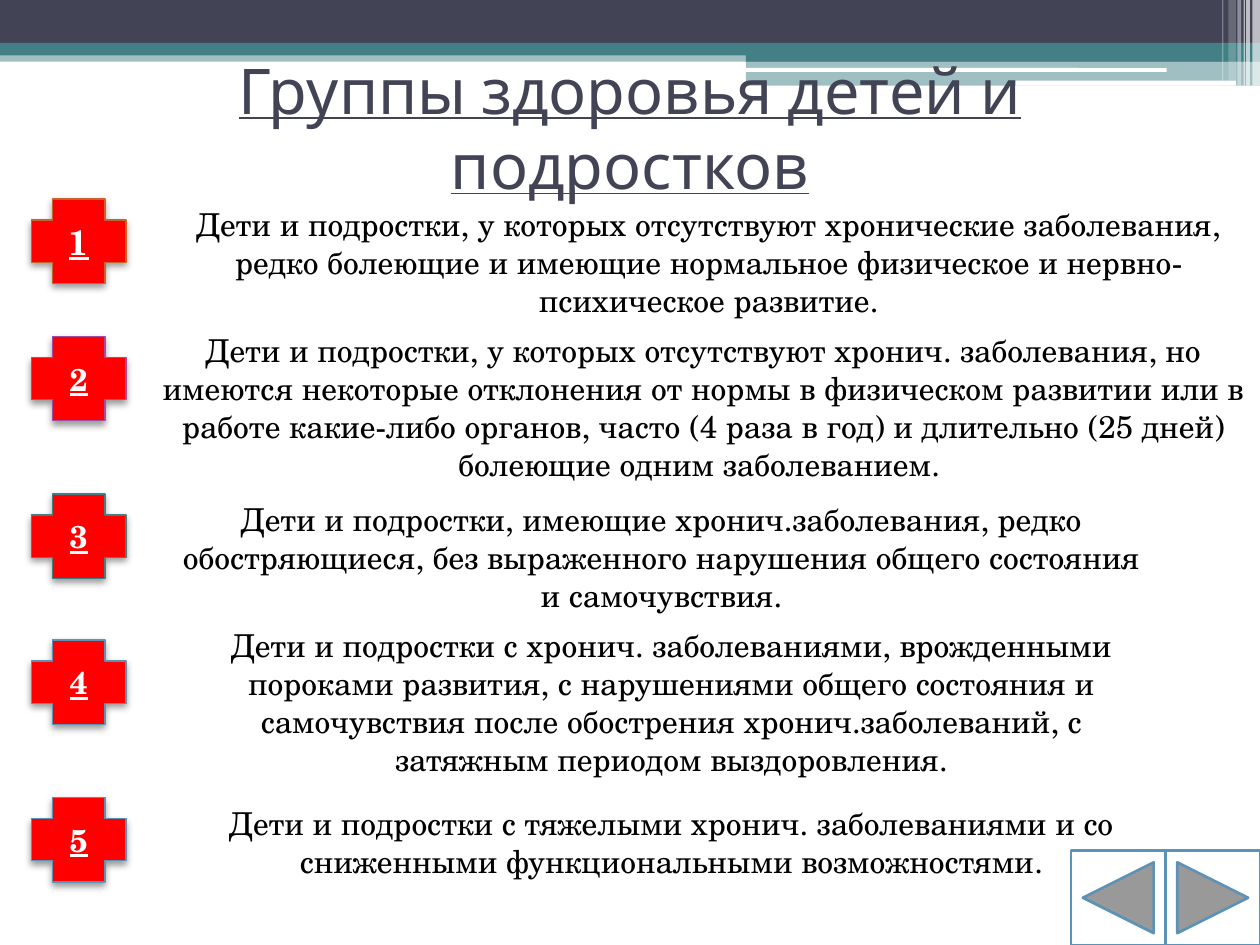
"""Builds a slide on the five health groups of children and teenagers."""
from lxml import etree
from pptx import Presentation
from pptx.dml.color import RGBColor
from pptx.enum.shapes import MSO_SHAPE
from pptx.enum.text import MSO_ANCHOR, MSO_AUTO_SIZE, PP_ALIGN
from pptx.oxml import parse_xml
from pptx.oxml.ns import nsdecls, qn
from pptx.util import Inches, Pt

RECT, ROUND, CROSS = MSO_SHAPE.RECTANGLE, MSO_SHAPE.ROUNDED_RECTANGLE, MSO_SHAPE.CROSS
NEXT = MSO_SHAPE.ACTION_BUTTON_FORWARD_OR_NEXT
BACK = MSO_SHAPE.ACTION_BUTTON_BACK_OR_PREVIOUS
CENTER, MIDDLE, FIXED = PP_ALIGN.CENTER, MSO_ANCHOR.MIDDLE, MSO_AUTO_SIZE.NONE
SERIF = "TeX Gyre Schola"
NAVY, TEAL, WHITE, RED, BLUE = "424456", "438086", "FFFFFF", "FF0000", "5C92B5"
SHADOW = (
    f'<a:outerShdw {nsdecls("a")} blurRad="52070" dist="25400" dir="5400000" rotWithShape="0">'
    '<a:srgbClr val="000000"><a:alpha val="40000"/></a:srgbClr></a:outerShdw>'
)

deck = Presentation()
deck.slide_width, deck.slide_height = Inches(10), Inches(7.5)
slide = deck.slides.add_slide(deck.slide_layouts[5])
shapes = slide.shapes


def draw(kind, box, fill, line=None, width=0.75):
    shape = shapes.add_shape(kind, *[Inches(v) for v in box])
    shape.shadow.inherit = False
    shape.fill.solid()
    shape.fill.fore_color.rgb = RGBColor.from_string(fill)
    if line:
        shape.line.color.rgb = RGBColor.from_string(line)
        shape.line.width = Pt(width)
    else:
        shape.line.fill.background()
    return shape


def write(shape, text, size, color, face=SERIF, bold=False, under=False):
    frame = shape.text_frame
    frame.word_wrap = True
    frame.text = text
    para = frame.paragraphs[0]
    para.alignment = CENTER
    font = para.runs[0].font
    font.name, font.size, font.bold, font.underline = face, Pt(size), bold, under
    font.color.rgb = RGBColor.from_string(color)
    return frame


bands = [
    (RECT, (0, 0.4, 10, 0.09), TEAL, 50),
    (RECT, (0, 0, 10, 0.34), NAVY, 100),
    (RECT, (0, 0.34, 10, 0.1), TEAL, 100),
    (RECT, (5.92, 0.39, 4.08, 0.1), TEAL, 100),
    (RECT, (5.92, 0.48, 4.08, 0.2), TEAL, 50),
    (ROUND, (5.91, 0.54, 3.35, 0.03), WHITE, 100),
    (ROUND, (8.06, 0.64, 1.75, 0.04), WHITE, 100),
    (RECT, (9.94, 0, 0.06, 0.68), WHITE, 65),
    (RECT, (9.89, 0, 0.03, 0.68), WHITE, 65),
    (RECT, (9.87, 0, 0.01, 0.68), WHITE, 60),
    (RECT, (9.82, 0, 0.03, 0.68), WHITE, 40),
    (RECT, (9.75, 0, 0.06, 0.64), WHITE, 20),
    (RECT, (9.7, 0, 0.01, 0.64), WHITE, 30),
]
for kind, box, fill, alpha in bands:
    band = draw(kind, box, fill)
    if alpha < 100:
        tint = band._element.spPr.find(".//" + qn("a:srgbClr"))
        etree.SubElement(tint, qn("a:alpha"), val=str(alpha * 1000))

title = shapes.title
title.left, title.top, title.width, title.height = [Inches(v) for v in (0.5, 0.42, 9, 1.17)]
frame = write(title, "Группы здоровья детей и подростков", 36, NAVY, "Karla", under=True)
frame.vertical_anchor, frame.auto_size = MIDDLE, FIXED
shapes._spTree.append(title._element)

groups = [
    (1.58, "C4652D", 20, (1.25, 1.58, 8.75, 1.01),
     "Дети и подростки, у которых отсутствуют хронические заболевания, редко болеющие "
     "и имеющие нормальное физическое и нервно-психическое развитие."),
    (2.67, "A04DA3", 18, (1.17, 2.58, 8.83, 1.31),
     "Дети и подростки, у которых отсутствуют хронич. заболевания, но имеются некоторые "
     "отклонения от нормы в физическом развитии или в работе какие-либо органов, часто "
     "(4 раза в год) и длительно (25 дней) болеющие одним заболеванием. "),
    (3.92, TEAL, 18, (1.25, 3.92, 8, 1.01),
     "Дети и подростки, имеющие хронич.заболевания, редко обостряющиеся, без выраженного "
     "нарушения общего состояния и самочувствия."),
    (5.08, BLUE, 18, (1.33, 4.92, 8, 1.31),
     "Дети и подростки с хронич. заболеваниями, врожденными пороками развития, "
     "с нарушениями общего состояния и самочувствия после обострения "
     "хронич.заболеваний, с затяжным периодом выздоровления."),
    (6.33, BLUE, 18, (1.33, 6.33, 8, 0.71),
     "Дети и подростки с тяжелыми хронич. заболеваниями и со сниженными "
     "функциональными возможностями."),
]
for num, (top, line, size, box, text) in enumerate(groups, 1):
    cross = draw(CROSS, (0.25, top, 0.75, 0.67), RED, line)
    cross._element.spPr.find(qn("a:effectLst")).append(parse_xml(SHADOW))
    write(cross, str(num), size, WHITE, bold=True, under=True).vertical_anchor = MIDDLE
    note = shapes.add_textbox(*[Inches(v) for v in box])
    write(note, text, 18, "000000")

for kind, left in ((NEXT, 9.25), (BACK, 8.5)):
    draw(kind, (left, 6.75, 0.75, 0.75), WHITE, BLUE, 1.5)

deck.save("out.pptx")
